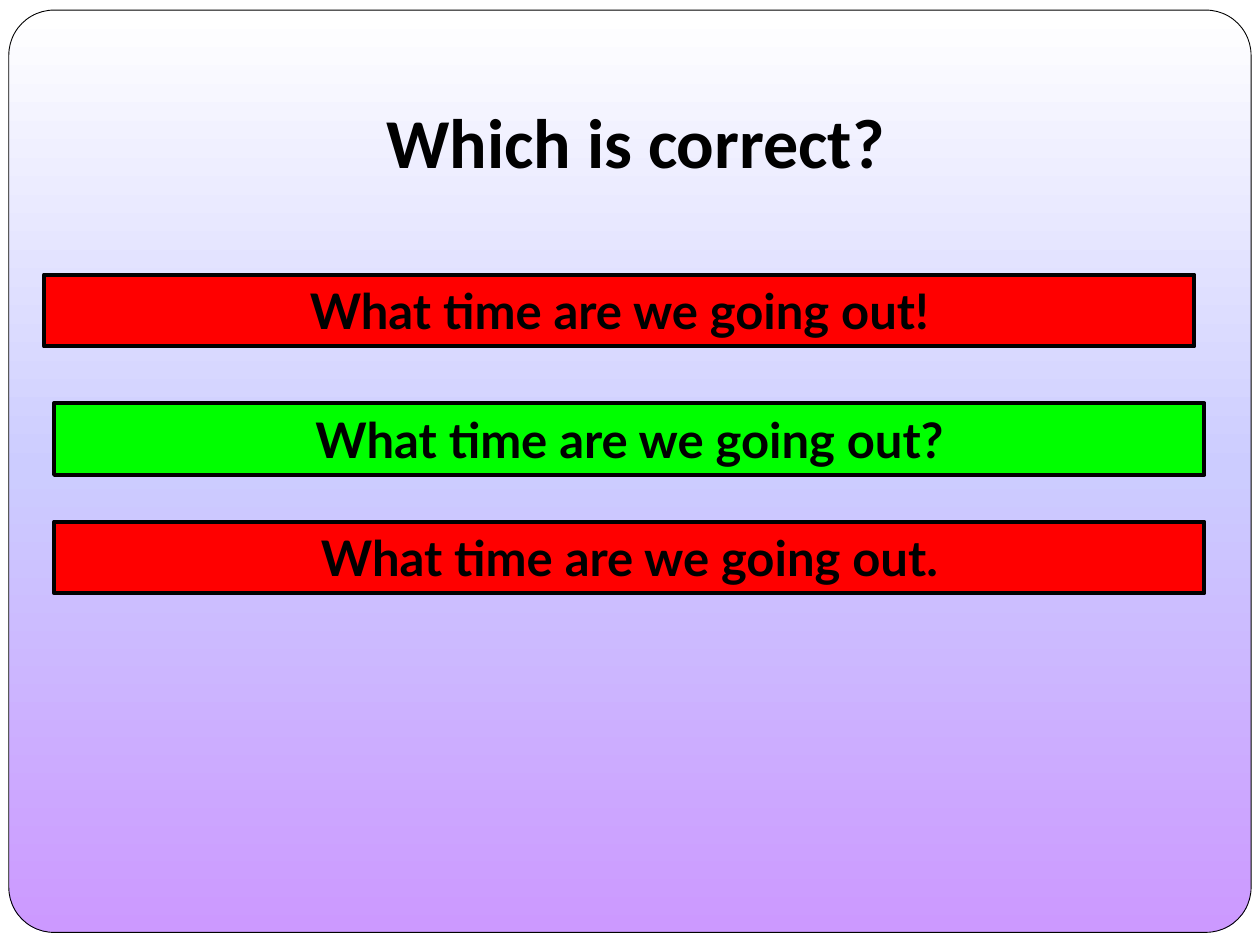
"""Build a quiz slide with a title and three answer bars."""
from copy import deepcopy
from dataclasses import dataclass

from pptx import Presentation
from pptx.dml.color import RGBColor
from pptx.enum.shapes import MSO_SHAPE
from pptx.enum.text import MSO_ANCHOR, MSO_AUTO_SIZE, PP_ALIGN
from pptx.oxml.ns import qn
from pptx.shapes.autoshape import Shape
from pptx.slide import Slide
from pptx.util import Inches, Pt


@dataclass(frozen=True)
class Theme:
    ink: str = "000000"
    paper: str = "FFFFFF"
    wrong: str = "FF0000"
    right: str = "00FF00"
    fade: tuple[str, ...] = ("FFFFFF", "CCCCFF", "CC99FF")
    head_font: str = "Calibri"
    bar_font: str = "Lato"
    head_size: float = 40
    bar_size: float = 28
    edge: float = 0.5
    border: float = 2.25


@dataclass(frozen=True)
class Answer:
    text: str
    left: float
    top: float
    color: str


THEME = Theme()
ANSWERS = (
    Answer("What time are we going out!", 0.35, 2.18, THEME.wrong),
    Answer("What time are we going out?", 0.43, 3.2, THEME.right),
    Answer("What time are we going out.", 0.43, 4.14, THEME.wrong),
)


def rgb(color: str) -> RGBColor:
    return RGBColor.from_string(color)


def write(shape: Shape, text: str, *, font: str, size: float,
          anchor: MSO_ANCHOR, grow: bool = False) -> None:
    frame = shape.text_frame
    frame.word_wrap = True
    frame.auto_size = MSO_AUTO_SIZE.SHAPE_TO_FIT_TEXT if grow else MSO_AUTO_SIZE.NONE
    frame.vertical_anchor = anchor
    line = frame.paragraphs[0]
    line.alignment = PP_ALIGN.CENTER
    run = line.add_run()
    run.text = text
    run.font.name = font
    run.font.size = Pt(size)
    run.font.bold = True
    run.font.color.rgb = rgb(THEME.ink)


def add_box(slide: Slide, kind: MSO_SHAPE, left: float, top: float,
            width: float, height: float, border: float) -> Shape:
    box = slide.shapes.add_shape(
        kind, Inches(left), Inches(top), Inches(width), Inches(height))
    box.shadow.inherit = False
    box.line.color.rgb = rgb(THEME.ink)
    box.line.width = Pt(border)
    return box


def add_panel(slide: Slide) -> None:
    panel = add_box(slide, MSO_SHAPE.ROUNDED_RECTANGLE,
                    0.07, 0.08, 9.86, 7.32, THEME.edge)
    panel.adjustments[0] = 0.049
    panel.fill.gradient()
    panel.fill.gradient_angle = 270
    first = next(panel._element.iter(qn("a:gs")))
    first.addnext(deepcopy(first))
    stops = panel.fill.gradient_stops
    for i, (stop, color) in enumerate(zip(stops, THEME.fade)):
        stop.position = i / (len(THEME.fade) - 1)
        stop.color.rgb = rgb(color)


def add_title(slide: Slide, text: str) -> None:
    title = slide.shapes.add_textbox(
        Inches(0.59), Inches(0.3), Inches(8.91), Inches(1.25))
    title.text_frame.margin_bottom = Inches(0.1)
    write(title, text, font=THEME.head_font, size=THEME.head_size,
          anchor=MSO_ANCHOR.BOTTOM)


def add_answer(slide: Slide, answer: Answer) -> None:
    bar = add_box(slide, MSO_SHAPE.RECTANGLE, answer.left, answer.top,
                  9.13, 0.57, THEME.border)
    bar.fill.solid()
    bar.fill.fore_color.rgb = rgb(answer.color)
    write(bar, answer.text, font=THEME.bar_font, size=THEME.bar_size,
          anchor=MSO_ANCHOR.TOP, grow=True)


def main() -> None:
    deck = Presentation()
    deck.slide_width, deck.slide_height = Inches(10), Inches(7.5)
    slide = deck.slides.add_slide(deck.slide_layouts[6])
    slide.background.fill.solid()
    slide.background.fill.fore_color.rgb = rgb(THEME.paper)
    add_panel(slide)
    add_title(slide, "Which is correct?")
    for answer in ANSWERS:
        add_answer(slide, answer)
    deck.save("out.pptx")


if __name__ == "__main__":
    main()
